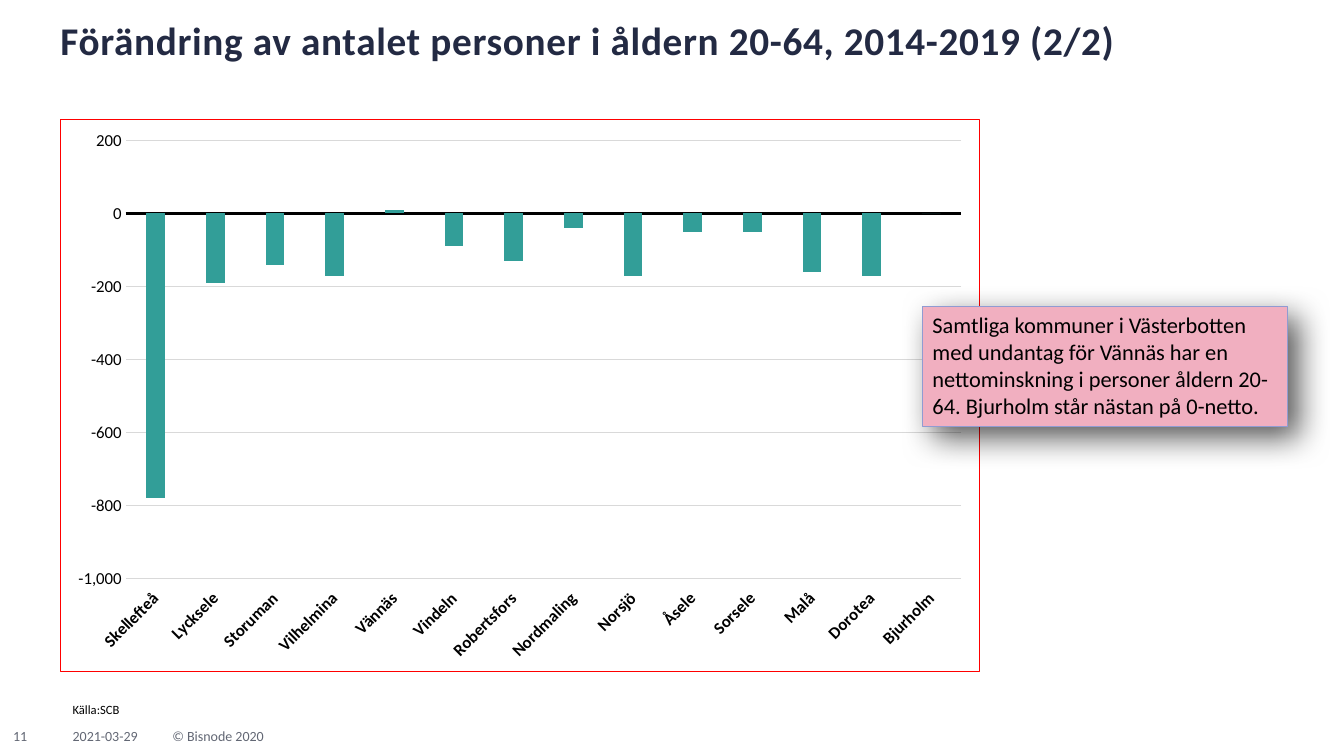
"""Build the slide on population change in Västerbotten's municipalities."""
from dataclasses import dataclass

from pptx import Presentation
from pptx.chart.data import CategoryChartData
from pptx.dml.color import RGBColor
from pptx.enum import chart as ch, shapes, text
from pptx.oxml import parse_xml
from pptx.oxml.ns import nsdecls, qn
from pptx.util import Inches, Pt

FONT = "Calibri"
BLACK = RGBColor(0x00, 0x00, 0x00)
NAVY = RGBColor(0x23, 0x2A, 0x43)
GREY = RGBColor(0x62, 0x67, 0x74)
GRID = RGBColor(0xD9, 0xD9, 0xD9)
TEAL = RGBColor(0x32, 0x9E, 0x98)
TEAL_ALT = RGBColor(0x32, 0xA0, 0x9A)
PINK = RGBColor(0xF1, 0xAF, 0xC0)
LILAC = RGBColor(0x90, 0x9B, 0xD2)

CHANGES = {
    "Skellefteå": -780, "Lycksele": -190, "Storuman": -140, "Vilhelmina": -170,
    "Vännäs": 10, "Vindeln": -90, "Robertsfors": -130, "Nordmaling": -40,
    "Norsjö": -170, "Åsele": -50, "Sorsele": -50, "Malå": -160,
    "Dorotea": -170, "Bjurholm": 0,
}


@dataclass
class Label:
    text: str
    left: float
    top: float
    width: float
    height: float
    size: int = 10
    color: RGBColor = GREY
    anchor: text.MSO_ANCHOR = text.MSO_ANCHOR.BOTTOM
    wrap: bool = False
    spacing: float = 1.0
    bold: bool = False


TITLE = Label("Förändring av antalet personer i åldern 20-64, 2014-2019 (2/2)",
              0.6, 0.21, 12.13, 0.42, 28, NAVY, wrap=True, spacing=0.9, bold=True)
LABELS = [
    Label("2021-03-29", 0.72, 7.21, 0.75, 0.17),
    Label("© Bisnode 2020", 1.71, 7.21, 3.94, 0.17, wrap=True),
    Label("11", 0.13, 7.21, 0.17, 0.17),
    Label("Källa:SCB", 0.72, 6.98, 0.47, 0.14, 9, BLACK, text.MSO_ANCHOR.TOP, spacing=0.9),
]


def style_font(font, size: float, color: RGBColor, bold: bool = False) -> None:
    font.name = FONT
    font.size = Pt(size)
    font.bold = bold
    font.color.rgb = color


def fill_text(sp, label: Label) -> None:
    sp.left, sp.top = Inches(label.left), Inches(label.top)
    sp.width, sp.height = Inches(label.width), Inches(label.height)
    tf = sp.text_frame
    tf.text = label.text
    tf.word_wrap = label.wrap
    tf.auto_size = text.MSO_AUTO_SIZE.NONE
    tf.vertical_anchor = label.anchor
    tf.margin_left = tf.margin_top = tf.margin_right = tf.margin_bottom = 0
    p = tf.paragraphs[0]
    p.alignment = text.PP_ALIGN.LEFT
    p.line_spacing = label.spacing
    style_font(p.runs[0].font, label.size, label.color, label.bold)


def add_title(s) -> None:
    sp = s.shapes.title
    fill_text(sp, TITLE)
    sp.element.xpath(".//a:rPr")[0].set("spc", "50")


def add_change_chart(s) -> None:
    data = CategoryChartData(number_format="#,##0")
    data.categories = list(CHANGES)
    data.add_series("Series 1", list(CHANGES.values()))
    chart = s.shapes.add_chart(ch.XL_CHART_TYPE.COLUMN_CLUSTERED, Inches(0.59), Inches(1.18),
                               Inches(9.13), Inches(5.49), data).chart
    chart.has_legend = chart.has_title = False
    style_font(chart.font, 10, BLACK)

    plot = chart.plots[0]
    plot.gap_width, plot.overlap, plot.vary_by_categories = 219, -27, False
    series = plot.series[0]
    series.invert_if_negative = False
    series.format.fill.solid()
    series.format.fill.fore_color.rgb = TEAL
    storuman = series.points[list(CHANGES).index("Storuman")].format.fill
    storuman.solid()
    storuman.fore_color.rgb = TEAL_ALT

    cat, val = chart.category_axis, chart.value_axis
    for axis in (cat, val):
        axis.major_tick_mark = axis.minor_tick_mark = ch.XL_TICK_MARK.NONE
        style_font(axis.tick_labels.font, 12, BLACK, bold=axis is cat)
    cat.tick_label_position = ch.XL_TICK_LABEL_POSITION.LOW
    cat.format.line.color.rgb = BLACK
    cat.format.line.width = Pt(2.5)
    val.minimum_scale, val.maximum_scale, val.major_unit = -1000, 200, 200
    val.tick_labels.number_format = "#,##0"
    val.tick_labels.number_format_is_linked = False
    val.format.line.fill.background()
    val.major_gridlines.format.line.color.rgb = GRID
    val.major_gridlines.format.line.width = Pt(0.75)

    root = chart.element
    root.xpath(".//c:catAx/c:txPr/a:bodyPr")[0].set("rot", "-2700000")
    root.find(qn("c:txPr")).addprevious(parse_xml(
        f'<c:spPr {nsdecls("c", "a")}><a:noFill/><a:ln w="9525"><a:solidFill>'
        '<a:srgbClr val="FF0000"/></a:solidFill></a:ln></c:spPr>'))


def add_callout(s) -> None:
    sp = s.shapes.add_shape(shapes.MSO_SHAPE.RECTANGLE, Inches(9.15), Inches(3.04),
                            Inches(3.62), Inches(1.19))
    sp.fill.solid()
    sp.fill.fore_color.rgb = PINK
    sp.line.color.rgb = LILAC
    sp.line.width = Pt(0.5)
    sp.element.spPr.append(parse_xml(
        f'<a:effectLst {nsdecls("a")}><a:outerShdw blurRad="{Pt(23)}" dist="{Pt(11)}" '
        'dir="2700000" algn="tl" rotWithShape="0"><a:srgbClr val="000000">'
        '<a:alpha val="65000"/></a:srgbClr></a:outerShdw></a:effectLst>'))
    tf = sp.text_frame
    tf.text = ("Samtliga kommuner i Västerbotten med undantag för Vännäs har en "
               "nettominskning i personer åldern 20-64. Bjurholm står nästan på 0-netto.")
    tf.word_wrap = True
    tf.vertical_anchor = text.MSO_ANCHOR.TOP
    p = tf.paragraphs[0]
    p.alignment = text.PP_ALIGN.LEFT
    p.space_after = Pt(6)
    style_font(p.runs[0].font, 16, BLACK)


def main() -> None:
    prs = Presentation()
    prs.slide_width, prs.slide_height = Inches(13.33), Inches(7.5)
    s = prs.slides.add_slide(prs.slide_layouts.get_by_name("Title Only"))
    add_title(s)
    add_change_chart(s)
    add_callout(s)
    for label in LABELS:
        fill_text(s.shapes.add_textbox(0, 0, 0, 0), label)
    prs.save("out.pptx")


if __name__ == "__main__":
    main()
